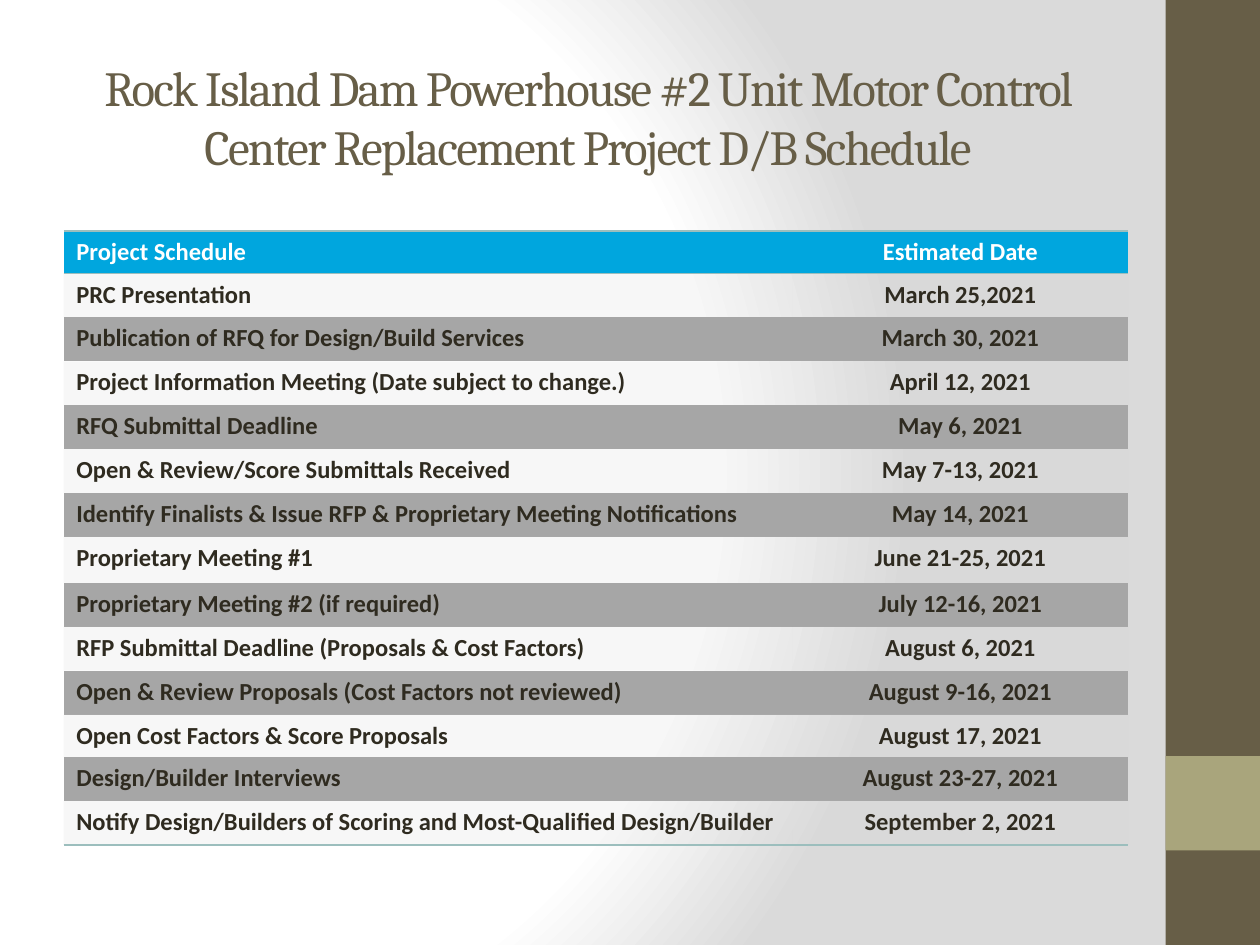
from lxml import etree
from pptx import Presentation
from pptx.dml.color import RGBColor
from pptx.enum import shapes, text
from pptx.oxml import parse_xml
from pptx.oxml.ns import nsdecls, qn
from pptx.util import Pt

BROWN, OLIVE, INK = "675E47", "A9A57C", "2F2B20"
BLUE, GREY, PALE, RULE = "00A6DE", "A6A6A6", "D9D9D9", "9CBEBD"
NO_STYLE_NO_GRID = "{2D5ABB26-0587-4C30-8999-92F81FD0307C}"

TITLE = ("Rock Island Dam Powerhouse #2 Unit Motor Control "
         "Center Replacement Project D/B Schedule")
SCHEDULE = [
    ("Project Schedule", "Estimated Date"),
    ("PRC Presentation", "March 25,2021"),
    ("Publication of RFQ for Design/Build Services", "March 30, 2021"),
    ("Project Information Meeting (Date subject to change.)", "April 12, 2021"),
    ("RFQ Submittal Deadline", "May 6, 2021"),
    ("Open & Review/Score Submittals Received", "May 7-13, 2021"),
    ("Identify Finalists & Issue RFP & Proprietary Meeting Notifications", "May 14, 2021"),
    ("Proprietary Meeting #1", "June 21-25, 2021"),
    ("Proprietary Meeting #2 (if required)", "July 12-16, 2021"),
    ("RFP Submittal Deadline (Proposals & Cost Factors)", "August 6, 2021"),
    ("Open & Review Proposals (Cost Factors not reviewed)", "August 9-16, 2021"),
    ("Open Cost Factors & Score Proposals", "August 17, 2021"),
    ("Design/Builder Interviews", "August 23-27, 2021"),
    ("Notify Design/Builders of Scoring and Most-Qualified Design/Builder",
     "September 2, 2021"),
]
ROW_HEIGHT = 25.1
SPECIAL_HEIGHTS = {0: 24, 7: 26.3, 11: 24}


def paint(fill, color, alpha=None):
    fill.solid()
    fill.fore_color.rgb = RGBColor.from_string(color)
    if alpha is not None:
        clr = fill._xPr.find(qn("a:solidFill"))[0]
        etree.SubElement(clr, qn("a:alpha"), val=str(alpha * 1000))


def write(frame, words, size, font, color, bold=False, centered=False, spacing=None):
    line = frame.paragraphs[0]
    line.alignment = text.PP_ALIGN.CENTER if centered else text.PP_ALIGN.LEFT
    run = line.add_run()
    run.text = words
    run.font.size, run.font.name, run.font.bold = Pt(size), font, bold
    run.font.color.rgb = RGBColor.from_string(color)
    if spacing is not None:
        run.font._element.set("spc", str(spacing * 100))


def add_background(slide):
    """Radial fade from white at the left to grey at the right."""
    slide.background.fill.solid()
    solid = slide.background._cSld.find(".//" + qn("a:solidFill"))
    stops = "".join(
        f'<a:gs pos="{pos * 1000}"><a:srgbClr val="{color}"/></a:gs>'
        for pos, color in ((0, "FFFFFF"), (75, "FFFFFF"), (100, "DADADA")))
    solid.getparent().replace(solid, parse_xml(
        f'<a:gradFill {nsdecls("a")} rotWithShape="1"><a:gsLst>{stops}</a:gsLst>'
        '<a:path path="circle"><a:fillToRect l="20000" t="50000" r="100000" b="50000"/>'
        '</a:path></a:gradFill>'))


def add_sidebar(slide, left, top, width, height):
    for offset, band_height, color in ((0, height, BROWN), (height * 0.8, width, OLIVE)):
        band = slide.shapes.add_shape(shapes.MSO_SHAPE.RECTANGLE, Pt(left),
                                      Pt(top + offset), Pt(width), Pt(band_height))
        band.shadow.inherit = False
        band.line.fill.background()
        paint(band.fill, color)


def add_title(slide, left, top, width, height):
    title = slide.shapes.title
    title.left, title.top, title.width, title.height = map(Pt, (left, top, width, height))
    title.text_frame.vertical_anchor = text.MSO_ANCHOR.MIDDLE
    write(title.text_frame, TITLE, 28, "Cambria", BROWN, centered=True, spacing=-1)


def add_rule(cell, side):
    """Draw a thin border on side T or B; borders come before the fill."""
    cell._tc.get_or_add_tcPr().insert(0, parse_xml(
        f'<a:ln{side} {nsdecls("a")} w="12700"><a:solidFill><a:srgbClr val="{RULE}"/>'
        f'</a:solidFill></a:ln{side}>'))


def add_schedule(slide, left, top, width):
    heights = [SPECIAL_HEIGHTS.get(i, ROW_HEIGHT) for i in range(len(SCHEDULE))]
    frame = slide.shapes.add_table(len(SCHEDULE), 2, Pt(left), Pt(top),
                                   Pt(width), Pt(sum(heights)))
    table = frame.table
    table.horz_banding = False
    table._tbl.tblPr.find(qn("a:tableStyleId")).text = NO_STYLE_NO_GRID
    date_width = 192
    table.columns[0].width = Pt(width - date_width)
    table.columns[1].width = Pt(date_width)
    last = len(SCHEDULE) - 1
    for r, entry in enumerate(SCHEDULE):
        table.rows[r].height = Pt(heights[r])
        for c, words in enumerate(entry):
            cell = table.cell(r, c)
            if r == 0:
                paint(cell.fill, BLUE)
            elif r % 2:
                paint(cell.fill, PALE, alpha=20)
            else:
                paint(cell.fill, GREY)
            write(cell.text_frame, words, 14, "Calibri", INK if r else "FFFFFF",
                  bold=True, centered=c == 1)
            if r in (0, last):
                add_rule(cell, "B")
            if r == 0:
                add_rule(cell, "T")


def main():
    deck = Presentation()
    deck.slide_width, deck.slide_height = Pt(720), Pt(540)
    slide = deck.slides.add_slide(deck.slide_layouts[5])
    add_background(slide)
    add_sidebar(slide, 666, 0, 54, 540)
    add_title(slide, 36, 21.6, 600, 90)
    add_schedule(slide, 36.4, 132, 608.4)
    deck.save("out.pptx")


if __name__ == "__main__":
    main()
